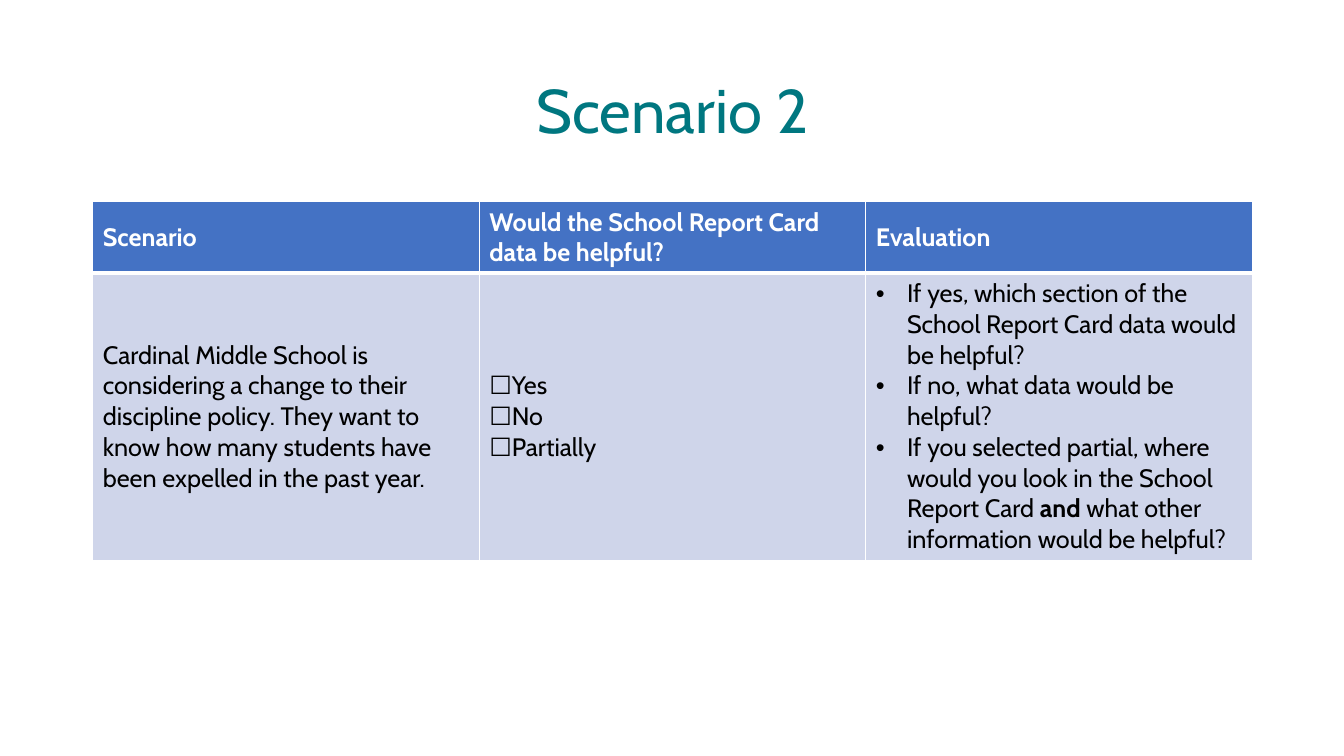
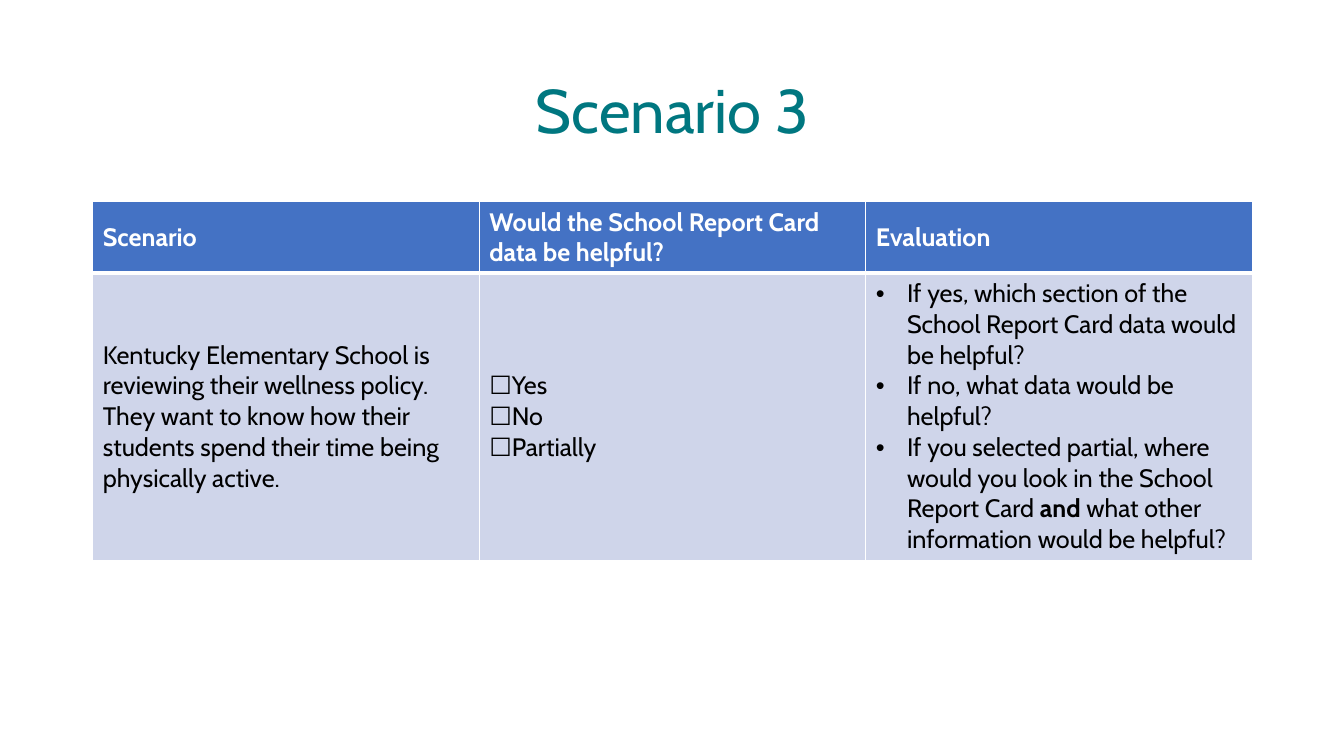
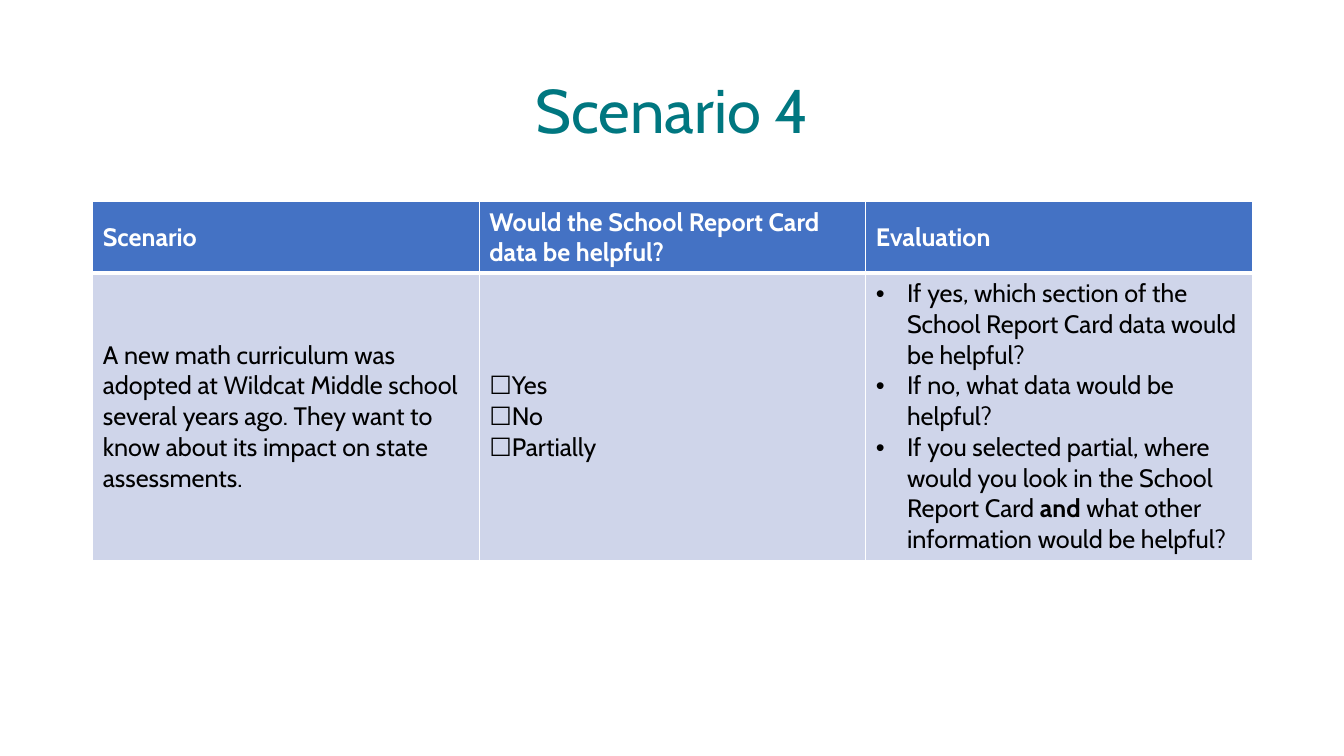
from lxml import etree
from pptx import Presentation
from pptx.dml.color import RGBColor
from pptx.enum import text
from pptx.oxml import ns
from pptx.util import Inches, Pt

FONT = "Cabin"
TEAL, BLUE, PALE, WHITE, BLACK = "007780", "4472C4", "CFD5EA", "FFFFFF", "000000"
LEFT, CONTENT_WIDTH = 0.92, 11.5
ROW_HEIGHTS = (0.7, 2.84)
HEADINGS = ("Scenario", "Would the School Report Card data be helpful?", "Evaluation")
ANSWERS = ("☐Yes", "☐No", "☐Partially")
QUESTIONS = (
    "If yes, which section of the School Report Card data would be helpful?",
    "If no, what data would be helpful?",
    "If you selected partial, where would you look in the School Report Card "
    "**and** what other information would be helpful?",
)
SCENARIOS = {
    "Scenario 2": "Cardinal Middle School is considering a change to their discipline "
                  "policy. They want to know how many students have been expelled in "
                  "the past year.",
    "Scenario 3": "Kentucky Elementary School is reviewing their wellness policy. They "
                  "want to know how their students spend their time being physically "
                  "active.",
    "Scenario 4": "A new math curriculum was adopted at Wildcat Middle school several "
                  "years ago. They want to know about its impact on state assessments.",
}


def rgb(value):
    return RGBColor.from_string(value)


def add_bullet(paragraph, indent=0.31):
    properties = paragraph._p.get_or_add_pPr()
    properties.set("marL", str(Inches(indent)))
    properties.set("indent", str(-Inches(indent)))
    etree.SubElement(properties, ns.qn("a:buFont")).set("typeface", "Arial")
    etree.SubElement(properties, ns.qn("a:buChar")).set("char", "•")


def write(frame, lines, size=18, color=BLACK, bold=False, bullets=False,
          align=text.PP_ALIGN.LEFT, spacing=1.0):
    frame.word_wrap = True
    for index, line in enumerate(lines):
        paragraph = frame.paragraphs[0] if index == 0 else frame.add_paragraph()
        paragraph.alignment = align
        paragraph.line_spacing = spacing
        if bullets:
            add_bullet(paragraph)
        for position, part in enumerate(line.split("**")):
            run = paragraph.add_run()
            run.text = part
            run.font.name = FONT
            run.font.size = Pt(size)
            run.font.bold = bold or position % 2 == 1
            run.font.color.rgb = rgb(color)


def set_borders(cell, **widths):
    properties = cell._tc.get_or_add_tcPr()
    for index, side in enumerate("LRTB"):
        line = etree.Element(ns.qn(f"a:ln{side}"), w=str(Pt(widths.get(side, 1))))
        fill = etree.SubElement(line, ns.qn("a:solidFill"))
        etree.SubElement(fill, ns.qn("a:srgbClr")).set("val", WHITE)
        properties.insert(index, line)


def fill_cell(cell, lines, fill, borders, **style):
    cell.vertical_anchor = text.MSO_ANCHOR.MIDDLE
    cell.fill.solid()
    cell.fill.fore_color.rgb = rgb(fill)
    set_borders(cell, **borders)
    write(cell.text_frame, lines, **style)


def add_title(slide, words):
    title = slide.shapes.title
    title.left, title.top = Inches(LEFT), Inches(0.4)
    title.width, title.height = Inches(CONTENT_WIDTH), Inches(1.45)
    title.text_frame.vertical_anchor = text.MSO_ANCHOR.MIDDLE
    write(title.text_frame, [words], size=44, color=TEAL,
          align=text.PP_ALIGN.CENTER, spacing=0.9)


def add_worksheet(slide, scenario):
    worksheet = slide.shapes.add_table(
        len(ROW_HEIGHTS), len(HEADINGS), Inches(LEFT), Inches(2),
        Inches(CONTENT_WIDTH), Inches(sum(ROW_HEIGHTS))).table
    for row, height in zip(worksheet.rows, ROW_HEIGHTS):
        row.height = Inches(height)
    for column, heading in enumerate(HEADINGS):
        fill_cell(worksheet.cell(0, column), [heading], BLUE, {"B": 3},
                  color=WHITE, bold=True)
    for column, lines in enumerate(([scenario], ANSWERS, QUESTIONS)):
        fill_cell(worksheet.cell(1, column), lines, PALE, {"T": 3},
                  bullets=lines is QUESTIONS)


def main():
    deck = Presentation()
    deck.slide_width, deck.slide_height = Inches(13.33), Inches(7.5)
    for name, scenario in SCENARIOS.items():
        slide = deck.slides.add_slide(deck.slide_layouts.get_by_name("Title Only"))
        add_title(slide, name)
        add_worksheet(slide, scenario)
    deck.save("out.pptx")


if __name__ == "__main__":
    main()
